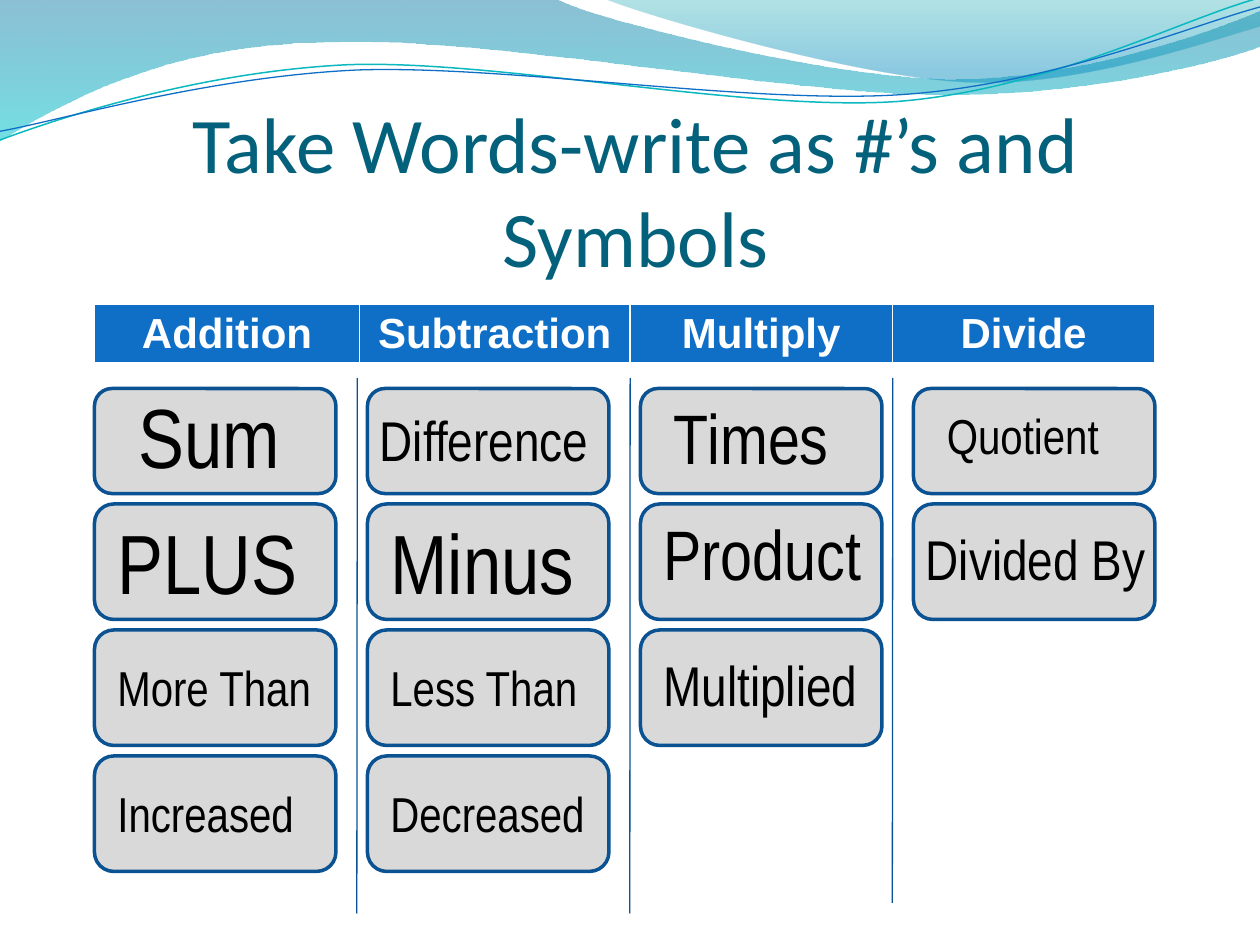
from lxml.etree import SubElement
from pptx import Presentation
from pptx.dml.color import RGBColor
from pptx.enum.shapes import MSO_CONNECTOR as Connector, MSO_SHAPE as Shape
from pptx.enum.text import MSO_ANCHOR as Anchor, MSO_AUTO_SIZE as AutoSize, PP_ALIGN as Align
from pptx.oxml.ns import qn
from pptx.util import Pt

TITLE = "Take Words-write as #’s and Symbols"
# Each word: text, size name, x and y offset from its card, text width
OPERATIONS = {
    "Addition": [("Sum", "huge", 18, -6, 126), ("PLUS", "huge", 6, 0, 126),
                 ("More Than", "small", 6, 12, 126), ("Increased", "small", 6, 12, 126)],
    "Subtraction": [("Difference", "medium", 0, 6, 138), ("Minus", "huge", 6, 0, 126),
                    ("Less Than", "small", 6, 12, 126), ("Decreased", "small", 6, 12, 126)],
    "Multiply": [("Times", "large", 12, 0, 138), ("Product", "large", 6, 0, 138),
                 ("Multiplied", "medium", 6, 8, 126)],
    "Divide": [("Quotient", "small", 12, 6, 126), ("Divided By", "medium", 0, 8, 150)],
}
# Each wave: start, then steps of one point (line) or three points (curve)
# Gradient stops: position, colour, opacity in percent
FILLED_WAVES = [
    ((0, -1),
     [[(317, -1)],
      [(343, 12), (478, 45), (546, 45)], [(614, 45), (690, 19), (720, 6)],
      [(721, 26)],
      [(708, 32), (626, 55), (537, 54)], [(448, 54), (275, 20), (185, 24)],
      [(93, 25), (33, 60), (-1, 81)]],
     [(0, "0074A1", 45), (1, "00C6CF", 55)]),
    ((345, -1),
     [[(366, 8), (491, 45), (554, 47)], [(616, 50), (692, 23), (720, 15)],
      [(720, 0)]],
     [(0, "00A1A9", 30), (0.8, "008BBF", 45)]),
]
LINE_WAVES = [
    ((0, 80),
     [[(35, 67), (114, 41), (199, 37)], [(284, 34), (427, 64), (513, 58)],
      [(600, 51), (675, 11), (719, -1)]], "0AB8BF", 0.85),
    ((0, 75),
     [[(34, 69), (118, 44), (204, 40)], [(290, 37), (430, 60), (516, 54)],
      [(602, 48), (679, 15), (720, 4)]], "0F6FC6", 0.75),
]
THEME = {
    "title": {"name": "Calibri", "size": 45, "color": "04617B"},
    "header": {"name": "Arial", "size": 24, "bold": True, "color": "FFFFFF"},
    "word": {"name": "Arial Narrow", "color": "000000"},
    "sizes": {"huge": 48, "large": 40, "medium": 32, "small": 28},
    "header_fill": "0F6FC6", "border": "FFFFFF",
    "card_fill": "D9D9D9", "card_line": "0B5292", "divider": "095295",
}
CARD_LEFT, CARD_STEP, CARD_WIDTH = 54, 156, 138
CARD_ROWS = [(222, 60), (288, 66), (360, 66), (432, 66)]
HEADER = (54, 174, 606, 30)
HEADER_WIDTHS = [151.5, 154.5, 150, 150]
DIVIDERS = [(204.2, 203.9, 522), (360.1, 359.9, 522), (510.2, 509.9, 516)]
DIVIDER_TOP = 216


def rgb(code):
    return RGBColor.from_string(code)


def points(*lengths):
    return [Pt(length) for length in lengths]


def set_line(line, color, width):
    line.color.rgb = rgb(color)
    line.width = Pt(width)


def write(frame, text, style, align=Align.LEFT):
    paragraph = frame.paragraphs[0]
    paragraph.alignment = align
    run = paragraph.add_run()
    run.text = text
    for key, value in style.items():
        if key == "color":
            run.font.color.rgb = rgb(value)
        else:
            setattr(run.font, key, Pt(value) if key == "size" else value)


def add_text(shapes, box, text, style, align=Align.LEFT, **frame_format):
    frame = shapes.add_textbox(*points(*box)).text_frame
    for key, value in {"word_wrap": True, **frame_format}.items():
        setattr(frame, key, value)
    write(frame, text, style, align)


def add_wave(shapes, start, steps, close):
    """Draw lines through all points, then turn each step of three into one curve."""
    builder = shapes.build_freeform(*points(*start))
    builder.add_line_segments([points(*point) for step in steps for point in step], close=close)
    wave = builder.convert_to_shape()
    wave.shadow.inherit = False
    lines = iter(list(wave._element.iter(qn("a:lnTo"))))
    for step in steps:
        first, *others = [next(lines) for _ in step]
        if others:
            first.tag = qn("a:cubicBezTo")
        for line in others:
            first.append(line[0])
            line.getparent().remove(line)
    return wave


def add_waves(shapes):
    for start, steps, stops in FILLED_WAVES:
        wave = add_wave(shapes, start, steps, True)
        wave.line.fill.background()
        wave.fill.gradient()
        wave.fill.gradient_angle = 270
        for stop, (position, color, _) in zip(wave.fill.gradient_stops, stops):
            stop.position = position
            stop.color.rgb = rgb(color)
        colors = wave._element.spPr.iter(qn("a:srgbClr"))
        for element, (_, _, opacity) in zip(colors, stops):
            SubElement(element, qn("a:alpha"), val=str(opacity * 1000))
    for start, steps, color, width in LINE_WAVES:
        wave = add_wave(shapes, start, steps, False)
        wave.fill.background()
        set_line(wave.line, color, width)


def add_borders(cell):
    """Put white borders before the cell's fill, as the schema orders them."""
    properties = cell._tc.get_or_add_tcPr()
    for index, (side, width) in enumerate({"lnL": 1, "lnR": 1, "lnT": 1, "lnB": 3}.items()):
        border = SubElement(properties, qn(f"a:{side}"), w=str(Pt(width)))
        fill = SubElement(border, qn("a:solidFill"))
        SubElement(fill, qn("a:srgbClr"), val=THEME["border"])
        properties.insert(index, border)


def add_header(shapes):
    table = shapes.add_table(1, len(OPERATIONS), *points(*HEADER)).table
    for column, width in zip(table.columns, HEADER_WIDTHS):
        column.width = Pt(width)
    for cell, operation in zip(table.rows[0].cells, OPERATIONS):
        cell.margin_bottom = Pt(2)
        cell.fill.solid()
        cell.fill.fore_color.rgb = rgb(THEME["header_fill"])
        add_borders(cell)
        write(cell.text_frame, operation, THEME["header"], Align.CENTER)


def add_dividers(shapes):
    for top_x, bottom_x, bottom in DIVIDERS:
        divider = shapes.add_connector(
            Connector.STRAIGHT, *points(top_x, DIVIDER_TOP, bottom_x, bottom))
        set_line(divider.line, THEME["divider"], 0.75)
        SubElement(divider._element.spPr, qn("a:effectLst"))


def add_cards(shapes):
    for column, words in enumerate(OPERATIONS.values()):
        left = CARD_LEFT + column * CARD_STEP
        for (word, size_name, dx, dy, width), (top, height) in zip(words, CARD_ROWS):
            card = shapes.add_shape(
                Shape.ROUNDED_RECTANGLE, *points(left, top, CARD_WIDTH, height))
            card.shadow.inherit = False
            card.fill.solid()
            card.fill.fore_color.rgb = rgb(THEME["card_fill"])
            set_line(card.line, THEME["card_line"], 2)
            size = THEME["sizes"][size_name]
            add_text(shapes, (left + dx, top + dy, width, 1.2 * size + 7.2), word,
                     {**THEME["word"], "size": size}, auto_size=AutoSize.SHAPE_TO_FIT_TEXT)


def main():
    deck = Presentation()
    deck.slide_width, deck.slide_height = points(720, 540)
    shapes = deck.slides.add_slide(deck.slide_layouts[6]).shapes
    add_waves(shapes)
    add_text(shapes, (36, 55.5, 654, 106.5), TITLE, THEME["title"], Align.CENTER,
             vertical_anchor=Anchor.BOTTOM, margin_left=0, margin_right=0, margin_bottom=0)
    add_header(shapes)
    add_dividers(shapes)
    add_cards(shapes)
    deck.save("out.pptx")


if __name__ == "__main__":
    main()
